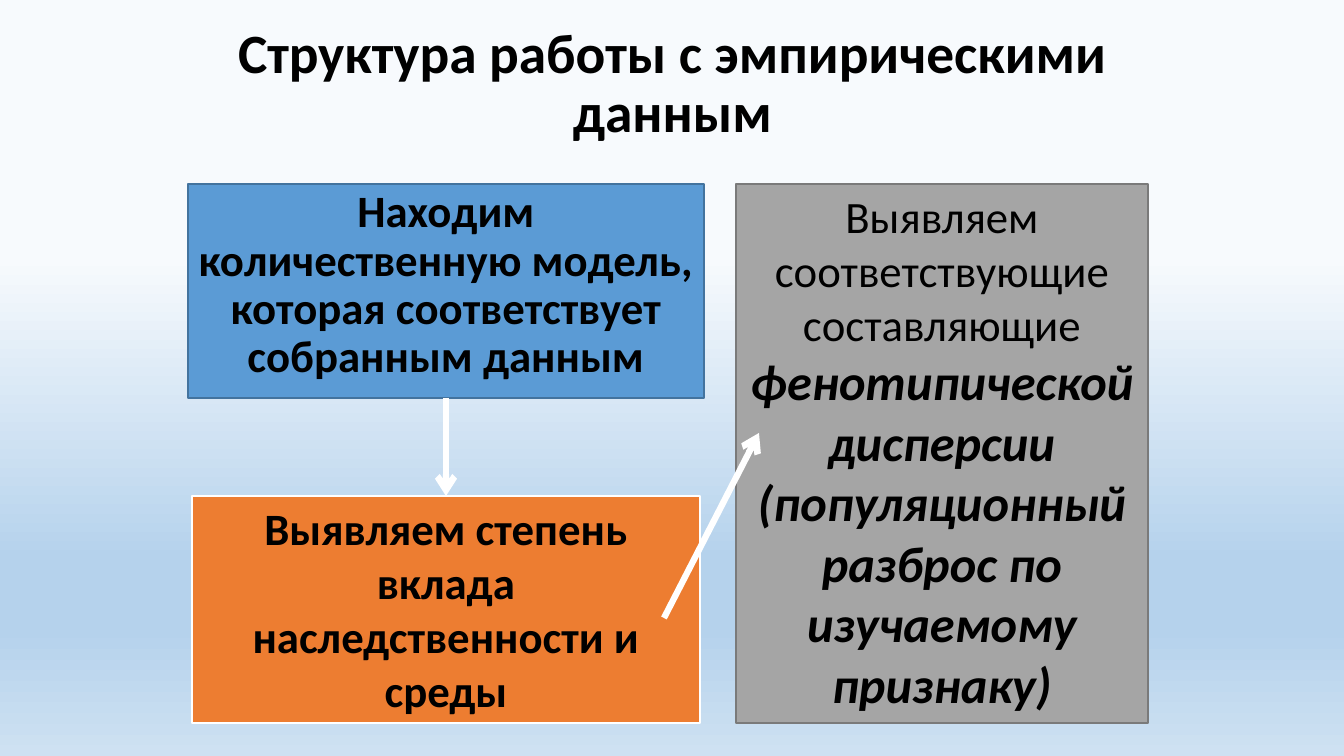
from copy import deepcopy
from dataclasses import dataclass, field

from lxml.etree import SubElement
from pptx import Presentation
from pptx.dml.color import RGBColor
from pptx.enum.shapes import MSO_CONNECTOR as Conn, MSO_SHAPE as Geo
from pptx.enum.text import MSO_ANCHOR as Anchor, MSO_AUTO_SIZE as Fit, PP_ALIGN as Align
from pptx.oxml.ns import qn
from pptx.util import Pt

EMU_PER_PX = 914400 / 100.8

COLORS = {
    "text": "000000",
    "white": "FFFFFF",
    "blue": "5B9BD5",
    "blue_edge": "43739E",
    "orange": "ED7D31",
    "gray": "A5A5A5",
    "gray_edge": "7A7A7A",
    "sky_pale": "F7FAFD",
    "sky_mid": "B5D2EC",
    "sky_low": "CEE1F2",
}
SKY = [(0.34, "sky_pale"), (0.74, "sky_mid"), (0.83, "sky_mid"), (1.0, "sky_low")]

TITLE = {"size": Pt(39.6), "bold": True}
PLAIN = {"size": Pt(32), "bold": False}
BOLD = {"size": Pt(32), "bold": True}
TERM = {"size": Pt(36), "bold": True, "italic": True}
TIGHT = {"line_spacing": 0.9}


@dataclass
class Run:
    text: str
    font: dict


@dataclass
class Box:
    key: str
    rect: tuple[int, int, int, int]
    fill: str
    edge: str
    edge_pt: float
    paragraphs: list[list[Run]]
    fit: Fit = Fit.SHAPE_TO_FIT_TEXT
    spacing: dict = field(default_factory=dict)


@dataclass
class Arrow:
    start: tuple[int, int]
    end: tuple[int, int]
    source: str = ""
    target: str = ""


BOXES = [
    Box("model", (188, 184, 516, 214), "blue", "blue_edge", 1,
        [[Run("Находим количественную модель, которая соответствует собранным данным", BOLD)]],
        Fit.NONE, TIGHT | {"space_before": Pt(10)}),
    Box("contribution", (192, 496, 508, 227), "orange", "white", 1.5,
        [[Run("Выявляем степень вклада наследственности и среды", BOLD)]]),
    Box("variance", (736, 184, 412, 539), "gray", "gray_edge", 1,
        [[Run("Выявляем соответствующие составляющие ", PLAIN),
          Run("фенотипической дисперсии", TERM)],
         [Run("(популяционный разброс по изучаемому признаку)", TERM)]]),
]
ARROWS = [
    Arrow((446, 398), (446, 496), "model", "contribution"),
    Arrow((664, 618), (759, 433)),
]


def px(n: int) -> int:
    return round(n * EMU_PER_PX)


def rgb(name: str) -> RGBColor:
    return RGBColor.from_string(COLORS[name])


def apply(target, values: dict) -> None:
    for attr, value in values.items():
        setattr(target, attr, value)


def write(tf, paragraphs: list[list[Run]], spacing: dict, frame: dict) -> None:
    apply(tf, {"word_wrap": True} | frame)
    for i, runs in enumerate(paragraphs):
        p = tf.add_paragraph() if i else tf.paragraphs[0]
        apply(p, {"alignment": Align.CENTER} | spacing)
        for run in runs:
            r = p.add_run()
            r.text = run.text
            apply(r.font, {"name": "Calibri"} | run.font)
            r.font.color.rgb = rgb("text")


def paint_sky(s) -> None:
    fill = s.background.fill
    fill.gradient()
    fill.gradient_angle = 270
    stops = next(s.element.iter(qn("a:gsLst")))
    while len(stops) < len(SKY):
        stops.append(deepcopy(stops[0]))
    for stop, (position, color) in zip(fill.gradient_stops, SKY):
        stop.position = position
        stop.color.rgb = rgb(color)


def add_title(s, text: str) -> None:
    sp = s.shapes.title
    apply(sp, {"left": px(223), "top": px(18), "width": px(899), "height": px(134)})
    write(sp.text_frame, [[Run(text, TITLE)]], TIGHT,
          {"vertical_anchor": Anchor.MIDDLE, "auto_size": Fit.NONE})


def add_box(s, box: Box):
    sp = s.shapes.add_shape(Geo.RECTANGLE, *map(px, box.rect))
    sp.shadow.inherit = False
    sp.fill.solid()
    sp.fill.fore_color.rgb = rgb(box.fill)
    sp.line.color.rgb = rgb(box.edge)
    sp.line.width = Pt(box.edge_pt)
    write(sp.text_frame, box.paragraphs, box.spacing,
          {"vertical_anchor": Anchor.TOP, "auto_size": box.fit})
    return sp


def add_arrow(s, arrow: Arrow, boxes: dict) -> None:
    line = s.shapes.add_connector(Conn.STRAIGHT, *map(px, arrow.start + arrow.end))
    if arrow.source:
        line.begin_connect(boxes[arrow.source], 2)
    if arrow.target:
        line.end_connect(boxes[arrow.target], 0)
    line.line.color.rgb = rgb("white")
    line.line.width = Pt(4.5)
    props = line.element.spPr
    SubElement(props.find(qn("a:ln")), qn("a:tailEnd"), type="arrow")
    SubElement(props, qn("a:effectLst"))


def main() -> None:
    prs = Presentation()
    apply(prs, {"slide_width": px(1344), "slide_height": px(756)})
    s = prs.slides.add_slide(prs.slide_layouts.get_by_name("Title Only"))
    paint_sky(s)
    add_title(s, "Структура работы с эмпирическими данным")
    boxes = {box.key: add_box(s, box) for box in BOXES}
    for arrow in ARROWS:
        add_arrow(s, arrow, boxes)
    prs.save("out.pptx")


if __name__ == "__main__":
    main()
